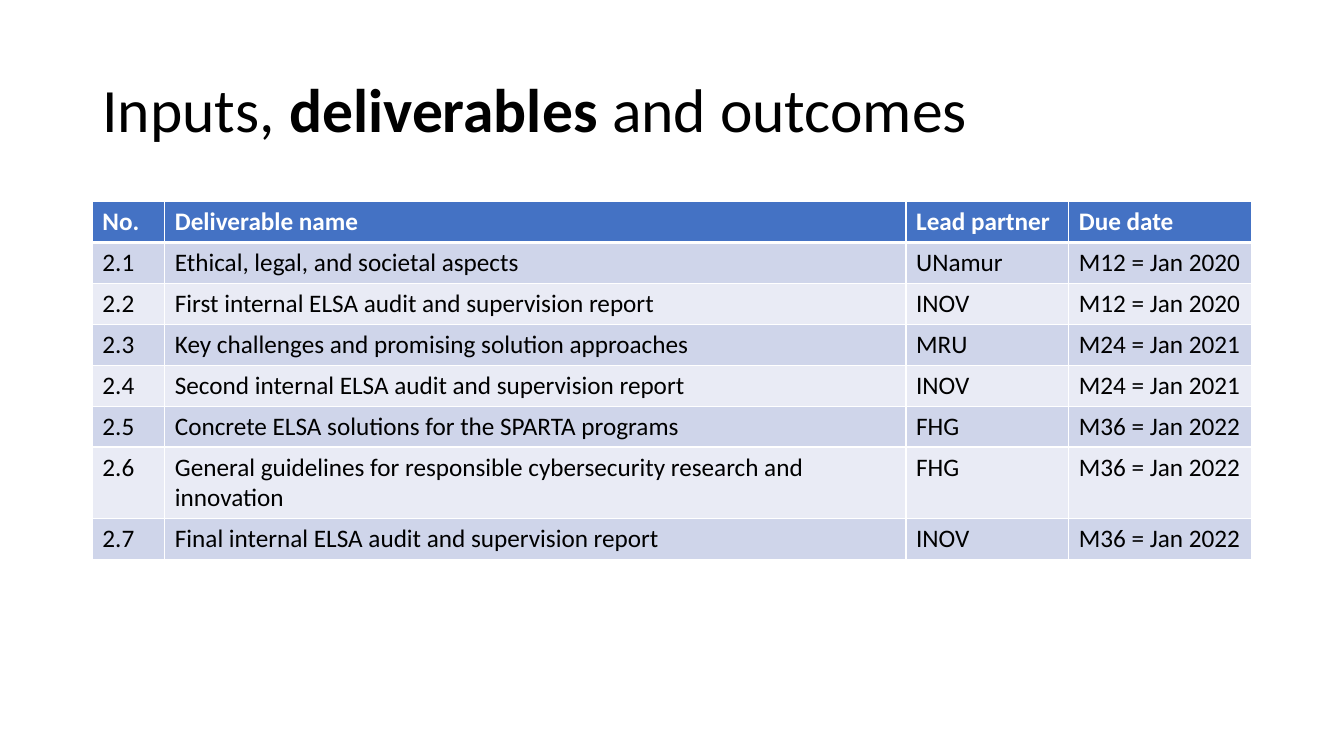
from lxml.etree import SubElement
from pptx import Presentation
from pptx.dml.color import RGBColor
from pptx.enum.text import MSO_ANCHOR, MSO_AUTO_SIZE, PP_ALIGN
from pptx.oxml.ns import qn
from pptx.util import Pt

PX = 9525
FONT = "Calibri"
BLACK = RGBColor(0x00, 0x00, 0x00)
WHITE = RGBColor(0xFF, 0xFF, 0xFF)
BLUE = RGBColor(0x44, 0x72, 0xC4)
BAND = RGBColor(0xCF, 0xD5, 0xEA)
PALE = RGBColor(0xE9, 0xEB, 0xF5)

TITLE = [("Inputs, ", False), ("deliverables ", True), ("and outcomes", False)]
HEADS = ("No.", "Deliverable name", "Lead partner", "Due date")
ITEMS = [
    ("2.1", "Ethical, legal, and societal aspects", "UNamur", "M12 = Jan 2020"),
    ("2.2", "First internal ELSA audit and supervision report", "INOV", "M12 = Jan 2020"),
    ("2.3", "Key challenges and promising solution approaches", "MRU", "M24 = Jan 2021"),
    ("2.4", "Second internal ELSA audit and supervision report", "INOV", "M24 = Jan 2021"),
    ("2.5", "Concrete ELSA solutions for the SPARTA programs", "FHG", "M36 = Jan 2022"),
    ("2.6", "General guidelines for responsible cybersecurity research and innovation",
     "FHG", "M36 = Jan 2022"),
    ("2.7", "Final internal ELSA audit and supervision report", "INOV", "M36 = Jan 2022"),
]
WIDTHS = (69, 706, 155, 174)
ROW = 39


def write(para, text, size=18, color=BLACK, bold=False):
    run = para.add_run()
    run.text = text
    font = run.font
    font.name, font.size, font.bold = FONT, Pt(size), bold
    font.color.rgb = color


def edge(cell, side, width):
    line = SubElement(cell._tc.get_or_add_tcPr(), qn(f"a:ln{side}"), w=str(Pt(width)))
    fill = SubElement(line, qn("a:solidFill"))
    SubElement(fill, qn("a:srgbClr"), val=str(WHITE))


def add_title(slide, left, top, width, height):
    title = slide.shapes.title
    title.left, title.top = left * PX, top * PX
    title.width, title.height = width * PX, height * PX
    frame = title.text_frame
    frame.word_wrap = True
    frame.auto_size = MSO_AUTO_SIZE.NONE
    frame.vertical_anchor = MSO_ANCHOR.MIDDLE
    para = frame.paragraphs[0]
    para.alignment = PP_ALIGN.LEFT
    para.line_spacing = 0.9
    for text, bold in TITLE:
        write(para, text, size=44, bold=bold)


def add_grid(slide, left, top, width):
    rows = [HEADS, *ITEMS]
    table = slide.shapes.add_table(
        len(rows), len(HEADS), left * PX, top * PX, width * PX, len(rows) * ROW * PX
    ).table
    for col, size in zip(table.columns, WIDTHS):
        col.width = size * width * PX // sum(WIDTHS)
    for r, row in enumerate(rows):
        table.rows[r].height = ROW * PX
        head = r == 0
        shade = BLUE if head else BAND if r % 2 else PALE
        for c, text in enumerate(row):
            cell = table.cell(r, c)
            for side in "LRTB":
                thick = head and side == "B" or r == 1 and side == "T"
                edge(cell, side, 3 if thick else 1)
            cell.fill.solid()
            cell.fill.fore_color.rgb = shade
            write(cell.text_frame.paragraphs[0], text,
                  color=WHITE if head else BLACK, bold=head)


def main():
    deck = Presentation()
    deck.slide_width, deck.slide_height = 1280 * PX, 720 * PX
    slide = deck.slides.add_slide(deck.slide_layouts[5])
    add_title(slide, 88, 38, 1104, 139)
    add_grid(slide, 88, 192, 1104)
    deck.save("out.pptx")


if __name__ == "__main__":
    main()
